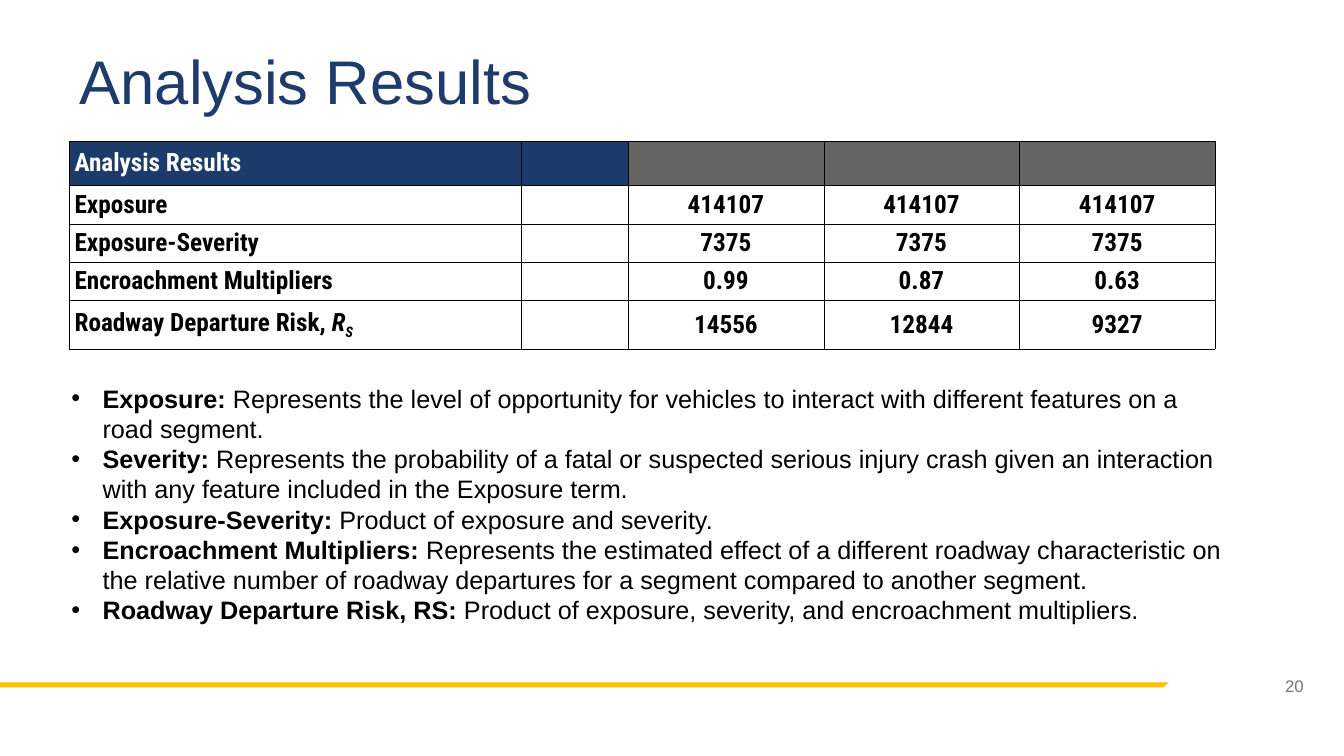
from lxml.etree import SubElement
from pptx import Presentation
from pptx.dml.color import RGBColor
from pptx.enum.text import MSO_ANCHOR, PP_ALIGN
from pptx.oxml.ns import qn
from pptx.util import Inches, Pt

NAVY, GRAY, WHITE, BLACK = "1C3B6B", "646464", "FFFFFF", "000000"
WIDTHS = [4.48, 1.06, 1.94, 1.94, 1.94]
HEIGHTS = [0.44, 0.38, 0.38, 0.38, 0.48]
ROWS = [
    ["Analysis Results", "", "", "", ""],
    ["Exposure", "", "414107", "414107", "414107"],
    ["Exposure-Severity", "", "7375", "7375", "7375"],
    ["Encroachment Multipliers", "", "0.99", "0.87", "0.63"],
    ["Roadway Departure Risk, ", "", "14556", "12844", "9327"],
]
TERMS = [
    ("Exposure: ", "Represents the level of opportunity for vehicles to "
     "interact with different features on a road segment."),
    ("Severity: ", "Represents the probability of a fatal or suspected serious "
     "injury crash given an interaction with any feature included in the "
     "Exposure term."),
    ("Exposure-Severity: ", "Product of exposure and severity."),
    ("Encroachment Multipliers: ", "Represents the estimated effect of a "
     "different roadway characteristic on the relative number of roadway "
     "departures for a segment compared to another segment."),
    ("Roadway Departure Risk, RS: ", "Product of exposure, severity, and "
     "encroachment multipliers."),
]


def color(code):
    return RGBColor.from_string(code)


def style(para, size, code, face="Arial", bold=None):
    font = para.font
    font.size, font.name, font.bold = Pt(size), face, bold
    font.color.rgb = color(code)


def add_box(slide, box, anchor=MSO_ANCHOR.TOP):
    """Add a wrapping text box and return its frame."""
    frame = slide.shapes.add_textbox(*map(Inches, box)).text_frame
    frame.word_wrap = True
    frame.vertical_anchor = anchor
    return frame


def add_line(slide, box, text, size, code, align=PP_ALIGN.LEFT):
    """Add a box with one line of text, centred in height."""
    para = add_box(slide, box, MSO_ANCHOR.MIDDLE).paragraphs[0]
    para.text, para.alignment = text, align
    style(para, size, code)
    return para


def add_stripe(slide, left, top, width, height):
    cut = 0.05
    build = slide.shapes.build_freeform(
        Inches(left), Inches(top + height), scale=1.0)
    points = [(left + 0.01, top), (left + width, top),
              (left + width - cut, top + height)]
    build.add_line_segments([(Inches(x), Inches(y)) for x, y in points])
    shape = build.convert_to_shape()
    shape.shadow.inherit = False
    shape.fill.solid()
    shape.fill.fore_color.rgb = color("FFC000")
    shape.line.fill.background()


def add_edges(cell):
    """Draw thin black borders; these must come before the cell's fill."""
    props = cell._tc.get_or_add_tcPr()
    for side in "LRTB":
        edge = SubElement(props, qn(f"a:ln{side}"), w=str(Pt(0.25)))
        fill = SubElement(edge, qn("a:solidFill"))
        SubElement(fill, qn("a:srgbClr"), val=BLACK)


def fill_cell(cell, text, back, ink, align):
    add_edges(cell)
    cell.fill.solid()
    cell.fill.fore_color.rgb = color(back)
    cell.margin_left = cell.margin_right = Inches(0.05)
    cell.margin_top = cell.margin_bottom = 0
    cell.vertical_anchor = MSO_ANCHOR.MIDDLE
    para = cell.text_frame.paragraphs[0]
    para.text, para.alignment = text, align
    style(para, 18, ink, "Roboto Condensed", True)


def add_grid(slide, left, top):
    frame = slide.shapes.add_table(
        len(ROWS), len(WIDTHS), Inches(left), Inches(top),
        Inches(sum(WIDTHS)), Inches(sum(HEIGHTS)))
    table = frame.table
    table.first_row = table.horz_banding = False
    for col, width in zip(table.columns, WIDTHS):
        col.width = Inches(width)
    for r, (row, height) in enumerate(zip(ROWS, HEIGHTS)):
        table.rows[r].height = Inches(height)
        for c, text in enumerate(row):
            head = NAVY if c < 2 else GRAY
            back, ink = (WHITE, BLACK) if r else (head, WHITE)
            align = PP_ALIGN.CENTER if c > 1 else PP_ALIGN.LEFT
            fill_cell(table.cell(r, c), text, back, ink, align)
    risk = table.cell(len(ROWS) - 1, 0).text_frame.paragraphs[0]
    for text, base in (("R", 0), ("S", -25000)):
        run = risk.add_run()
        run.text, run.font.italic = text, True
        run._r.get_or_add_rPr().set("baseline", str(base))


def add_terms(slide, box):
    frame = add_box(slide, box)
    for i, (term, text) in enumerate(TERMS):
        para = frame.add_paragraph() if i else frame.paragraphs[0]
        props = para._p.get_or_add_pPr()
        props.set("marL", str(Inches(0.31)))
        props.set("indent", str(Inches(-0.31)))
        SubElement(props, qn("a:buFont"), typeface="Arial")
        SubElement(props, qn("a:buChar"), char="•")
        style(para, 18, BLACK)
        for part, bold in ((term, True), (text, False)):
            run = para.add_run()
            run.text, run.font.bold = part, bold


def main():
    deck = Presentation()
    deck.slide_width, deck.slide_height = Inches(13.33), Inches(7.5)
    slide = deck.slides.add_slide(deck.slide_layouts[6])
    add_stripe(slide, -0.01, 6.77, 11.6, 0.05)
    title = add_line(slide, (0.69, 0.28, 11.5, 1.12), "Analysis Results",
                     44, "1D3B6B")
    title.line_spacing = 0.9
    add_line(slide, (12.19, 6.67, 0.84, 0.26), "20", 12, "757575",
             PP_ALIGN.RIGHT)
    add_grid(slide, 0.69, 1.4)
    add_terms(slide, (0.61, 3.75, 11.66, 2.52))
    deck.save("out.pptx")


if __name__ == "__main__":
    main()
